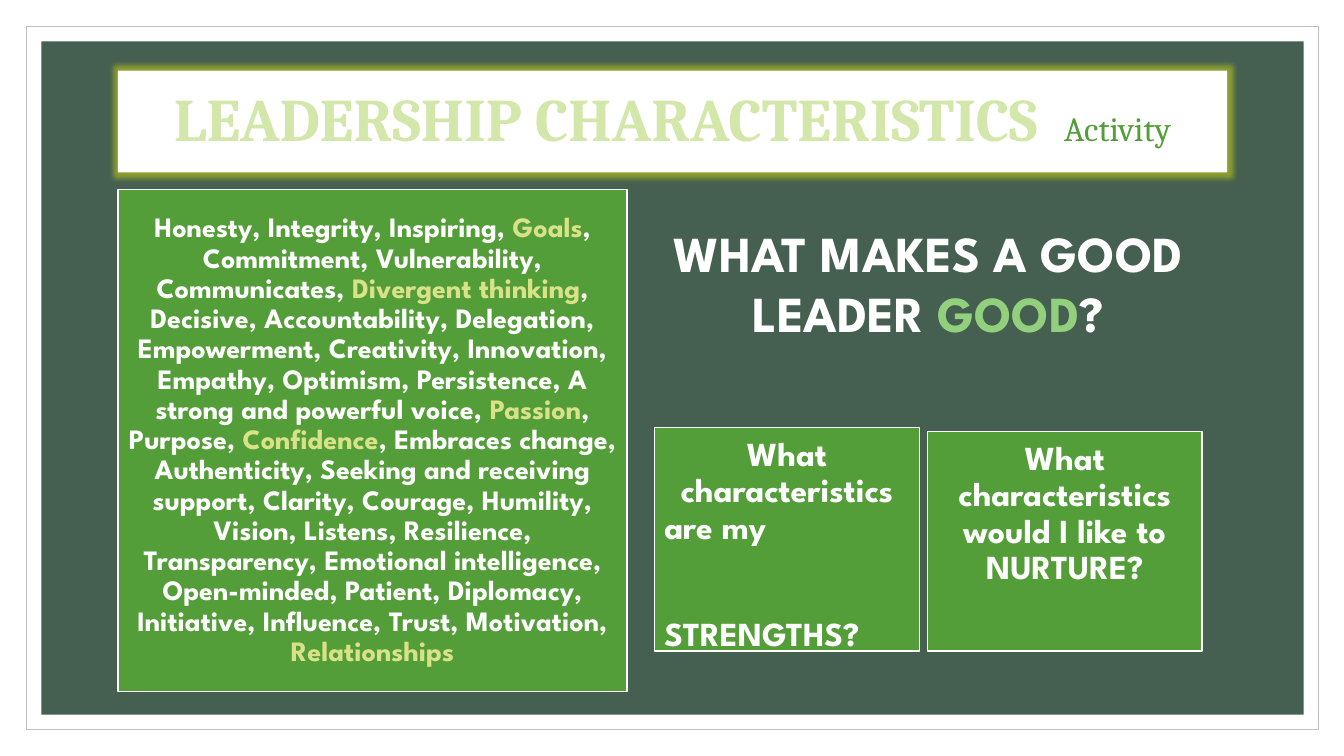
"""Build the leadership characteristics activity slide."""
from lxml.etree import SubElement
from pptx import Presentation
from pptx.dml.color import RGBColor
from pptx.enum.shapes import MSO_SHAPE as Shape
from pptx.enum.text import MSO_ANCHOR as Anchor, MSO_AUTO_SIZE as AutoSize, PP_ALIGN as Align
from pptx.oxml import parse_xml
from pptx.oxml.ns import nsdecls, qn
from pptx.util import Inches, Pt

WHITE = RGBColor(0xFF, 0xFF, 0xFF)
GRAY = RGBColor(0xBF, 0xBF, 0xBF)
DARK_GREEN = RGBColor(0x45, 0x5F, 0x51)
GREEN = RGBColor(0x54, 0x9E, 0x39)
PALE_GREEN = RGBColor(0xD2, 0xE7, 0xA9)
LIGHT_GREEN = RGBColor(0x93, 0xD0, 0x7D)
YELLOW = RGBColor(0xD9, 0xE2, 0x89)
BODY_FONT = "League Spartan"


def add_panel(box, fill, line=None, line_width=1):
    panel = slide.shapes.add_shape(Shape.RECTANGLE, *map(Inches, box))
    panel.shadow.inherit = False
    panel.fill.solid()
    panel.fill.fore_color.rgb = fill
    if line is None:
        panel.line.fill.background()
    else:
        panel.line.color.rgb = line
        panel.line.width = Pt(line_width)
    return panel


def add_run(paragraph, text, size, color, font=BODY_FONT, bold=True):
    run = paragraph.add_run()
    run.text = text
    run.font.size = Pt(size)
    run.font.name = font
    run.font.bold = bold
    run.font.color.rgb = color
    return run


prs = Presentation()
prs.slide_width, prs.slide_height = Inches(13.33), Inches(7.5)
slide = prs.slides.add_slide(prs.slide_layouts[5])

add_panel((0.26, 0.26, 12.82, 6.98), WHITE, GRAY, 0.5)
add_panel((0.41, 0.41, 12.52, 6.68), DARK_GREEN)

title = slide.shapes.title
title.element.getparent().append(title.element)
title.left, title.top, title.width, title.height = map(Inches, (1.17, 0.7, 11, 1.01))
title.fill.solid()
title.fill.fore_color.rgb = WHITE
glow_effect = SubElement(title.element.spPr, qn("a:effectLst"))
glow_effect.append(parse_xml(
    f'<a:glow {nsdecls("a")} rad="101600"><a:srgbClr val="8C9F2E"/></a:glow>'))
title.text_frame.auto_size = AutoSize.NONE
title.text_frame.vertical_anchor = Anchor.MIDDLE
heading = title.text_frame.paragraphs[0]
heading.alignment = Align.CENTER
heading.line_spacing = 0.9
topic = add_run(heading, "LEADERSHIP CHARACTERISTICS  ", 43.2, PALE_GREEN, "Cambria")
topic.font._element.insert(0, parse_xml(
    f'<a:ln {nsdecls("a")} w="22225"><a:solidFill><a:srgbClr val="8AB833"/></a:solidFill></a:ln>'))
add_run(heading, "Activity", 24.3, GREEN, "Cambria", False)

traits = [
    ("Honesty, Integrity, Inspiring, ", WHITE),
    ("Goals", YELLOW),
    (", Commitment, Vulnerability, Communicates, ", WHITE),
    ("Divergent thinking", YELLOW),
    (", Decisive, Accountability, Delegation, Empowerment, Creativity, Innovation, "
     "Empathy, Optimism, Persistence, A strong and powerful voice, ", WHITE),
    ("Passion", YELLOW),
    (", Purpose, ", WHITE),
    ("Confidence", YELLOW),
    (", Embraces change, Authenticity, Seeking and receiving support, Clarity, Courage, "
     "Humility, Vision, Listens, Resilience, Transparency, Emotional intelligence, "
     "Open-minded, Patient, Diplomacy, Initiative, Influence, Trust, Motivation, ", WHITE),
    ("Relationships", YELLOW),
]
strengths = [
    ("What characteristics", Align.CENTER, 0),
    ("are my", Align.LEFT, 0),
    ("STRENGTHS?", Align.LEFT, 50.5),
]
nurture = [("What characteristics would I like to NURTURE?", Align.CENTER, 0)]

panels = [
    ((1.17, 1.88, 5.05, 4.98), Anchor.MIDDLE, 0.08, 20, [(traits, Align.CENTER, 0)]),
    ((6.49, 4.24, 2.63, 2.22), Anchor.TOP, 0.1, 24,
     [([(text, WHITE)], align, gap) for text, align, gap in strengths]),
    ((9.2, 4.28, 2.72, 2.18), Anchor.TOP, 0.1, 24,
     [([(text, WHITE)], align, gap) for text, align, gap in nurture]),
]
for box, anchor, inset, size, paragraphs in panels:
    frame = add_panel(box, GREEN, WHITE).text_frame
    frame.word_wrap = True
    frame.vertical_anchor = anchor
    frame.margin_left = frame.margin_right = Inches(inset)
    frame.margin_top = frame.margin_bottom = Inches(inset)
    for index, (runs, align, gap) in enumerate(paragraphs):
        paragraph = frame.add_paragraph() if index else frame.paragraphs[0]
        paragraph.alignment = align
        paragraph.line_spacing = 0.9
        if gap:
            paragraph.space_before = Pt(gap)
        for text, color in runs:
            add_run(paragraph, text, size, color)

question = slide.shapes.add_textbox(*map(Inches, (6.55, 2.15, 5.31, 1.92))).text_frame
question.word_wrap = True
question_line = question.paragraphs[0]
question_line.alignment = Align.CENTER
for text, color in [("WHAT MAKES A GOOD LEADER ", WHITE), ("GOOD", LIGHT_GREEN), ("?", WHITE)]:
    add_run(question_line, text, 36, color)

prs.save("out.pptx")
